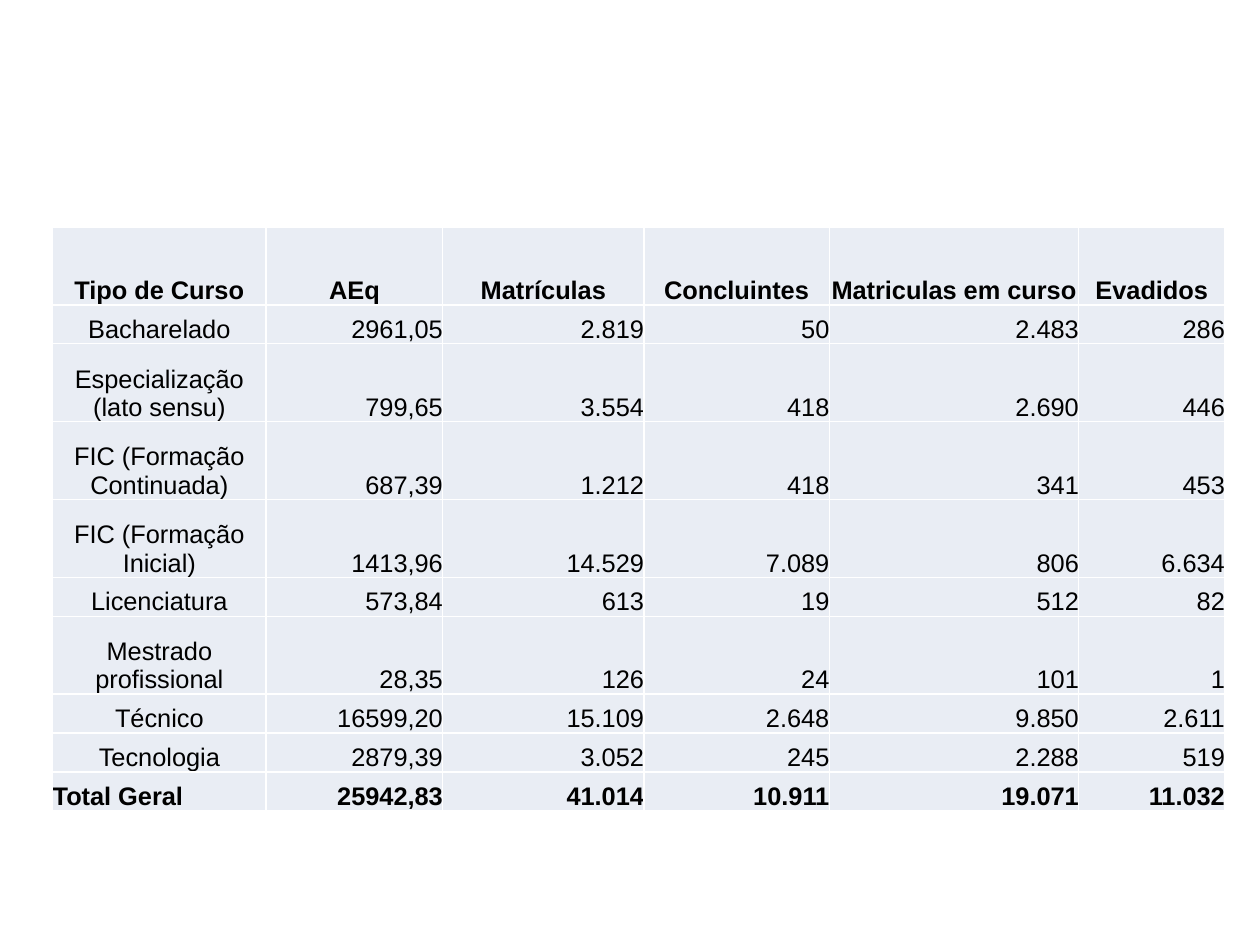
from lxml.etree import SubElement
from pptx import Presentation
from pptx.dml.color import RGBColor
from pptx.enum.text import MSO_ANCHOR, PP_ALIGN
from pptx.oxml.ns import qn
from pptx.util import Pt

COLORS = {"text": "000000", "cell": "E9EDF4", "border": "FFFFFF"}
FONT_NAME = "Arial"
COLUMN_WIDTHS = [134.4, 111.4, 126.75, 116.75, 157.2, 92]
LINE_HEIGHT = 24.53
TWO_LINE_ROWS = {0, 2, 3, 4, 6}

COURSE_ROWS = [
    ["Tipo de Curso", "AEq", "Matrículas", "Concluintes", "Matriculas em curso", "Evadidos"],
    ["Bacharelado", "2961,05", "2.819", "50", "2.483", "286"],
    ["Especialização (lato sensu)", "799,65", "3.554", "418", "2.690", "446"],
    ["FIC (Formação Continuada)", "687,39", "1.212", "418", "341", "453"],
    ["FIC (Formação Inicial)", "1413,96", "14.529", "7.089", "806", "6.634"],
    ["Licenciatura", "573,84", "613", "19", "512", "82"],
    ["Mestrado profissional", "28,35", "126", "24", "101", "1"],
    ["Técnico", "16599,20", "15.109", "2.648", "9.850", "2.611"],
    ["Tecnologia", "2879,39", "3.052", "245", "2.288", "519"],
    ["Total Geral", "25942,83", "41.014", "10.911", "19.071", "11.032"],
]


def set_borders(cell, color, width):
    properties = cell._tc.get_or_add_tcPr()
    for side in ("a:lnL", "a:lnR", "a:lnT", "a:lnB"):
        line = SubElement(properties, qn(side), w=str(Pt(width)))
        fill = SubElement(line, qn("a:solidFill"))
        SubElement(fill, qn("a:srgbClr"), val=color)


def write_text(cell, text, size=16, bold=False, align=PP_ALIGN.RIGHT, color=COLORS["text"]):
    paragraph = cell.text_frame.paragraphs[0]
    paragraph.alignment = align
    run = paragraph.add_run()
    run.text = text
    run.font.name = FONT_NAME
    run.font.size = Pt(size)
    run.font.bold = bold
    run.font.color.rgb = RGBColor.from_string(color)


def style_cell(cell):
    cell.margin_left = cell.margin_right = cell.margin_top = cell.margin_bottom = Pt(0)
    cell.vertical_anchor = MSO_ANCHOR.BOTTOM
    set_borders(cell, COLORS["border"], 1)
    cell.fill.solid()
    cell.fill.fore_color.rgb = RGBColor.from_string(COLORS["cell"])


def cell_alignment(row_index, column_index):
    if row_index == 0:
        return PP_ALIGN.CENTER
    if column_index > 0:
        return PP_ALIGN.RIGHT
    return PP_ALIGN.LEFT if row_index == len(COURSE_ROWS) - 1 else PP_ALIGN.CENTER


def add_course_table(slide, left, top):
    heights = [LINE_HEIGHT * (2 if index in TWO_LINE_ROWS else 1)
               for index in range(len(COURSE_ROWS))]
    table = slide.shapes.add_table(
        len(COURSE_ROWS), len(COLUMN_WIDTHS),
        Pt(left), Pt(top), Pt(sum(COLUMN_WIDTHS)), Pt(sum(heights))).table
    table.first_row = False
    table.horz_banding = False
    for column, width in zip(table.columns, COLUMN_WIDTHS):
        column.width = Pt(width)
    for row_index, values in enumerate(COURSE_ROWS):
        table.rows[row_index].height = Pt(heights[row_index])
        bold = row_index in (0, len(COURSE_ROWS) - 1)
        for column_index, value in enumerate(values):
            cell = table.cell(row_index, column_index)
            style_cell(cell)
            write_text(cell, value, bold=bold,
                       align=cell_alignment(row_index, column_index))


def main():
    presentation = Presentation()
    presentation.slide_width = Pt(793.75)
    presentation.slide_height = Pt(595.25)
    slide = presentation.slides.add_slide(presentation.slide_layouts[6])
    add_course_table(slide, left=33.2, top=143)
    presentation.save("out.pptx")


if __name__ == "__main__":
    main()
